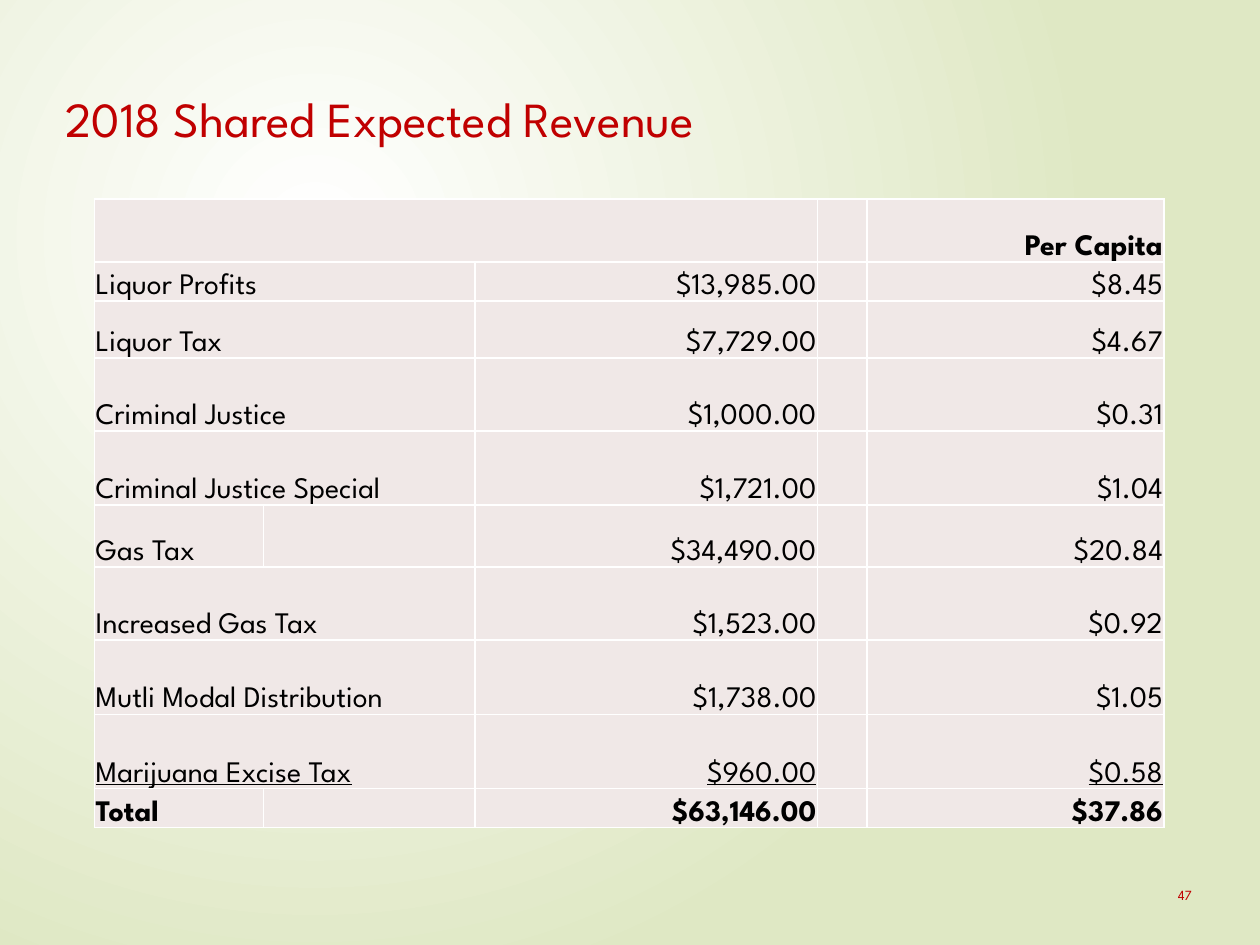
from lxml import etree
from pptx import Presentation
from pptx import util as u
from pptx.dml.color import RGBColor
from pptx.enum import text
from pptx.oxml import parse_xml
from pptx.oxml.ns import nsdecls, qn

COLORS = {"red": "C00000", "black": "000000", "cell": "F0E8E7",
          "white": "FFFFFF", "green": "DFE8C4"}
FONT = "League Spartan"
LEFT, RIGHT = text.PP_ALIGN.LEFT, text.PP_ALIGN.RIGHT

presentation = Presentation()
presentation.slide_width, presentation.slide_height = u.Inches(10), u.Inches(7.5)
slide = presentation.slides.add_slide(presentation.slide_layouts[6])
unit = presentation.slide_width / 100  # the slide is a grid of 100 by 75 units


def write(frame, words, size=17, color="black", align=LEFT, bold=False, underline=False):
    paragraph = frame.paragraphs[0]
    paragraph.alignment = align
    run = paragraph.add_run()
    run.text = words
    font = run.font
    font.name, font.size, font.bold, font.underline = FONT, u.Pt(size), bold, underline
    font.color.rgb = RGBColor.from_string(COLORS[color])


def style_cell(cell):
    """Fill the cell, tighten its margins and draw white borders."""
    cell.fill.solid()
    cell.fill.fore_color.rgb = RGBColor.from_string(COLORS["cell"])
    cell.vertical_anchor = text.MSO_ANCHOR.BOTTOM
    cell.margin_left = cell.margin_right = cell.margin_top = u.Inches(0.01)
    cell.margin_bottom = 0
    properties = cell._tc.get_or_add_tcPr()
    for index, side in enumerate(("lnL", "lnR", "lnT", "lnB")):
        properties.insert(index, parse_xml(
            f'<a:{side} {nsdecls("a")} w="12700"><a:solidFill>'
            f'<a:srgbClr val="{COLORS["white"]}"/></a:solidFill></a:{side}>'))


# Background: a round glow in the upper left
fill = slide.background.fill
fill.gradient()
for stop, name in zip(fill.gradient_stops, ("white", "green")):
    stop.color.rgb = RGBColor.from_string(COLORS[name])
gradient = slide._element.find(".//" + qn("a:gradFill"))
gradient.remove(gradient.find(qn("a:lin")))
glow = etree.SubElement(gradient, qn("a:path"), {"path": "circle"})
etree.SubElement(glow, qn("a:fillToRect"),
                 {"l": "50000", "t": "50000", "r": "100000", "b": "100000"})

# Title and slide number: words, size, box and top inset in grid units
for words, size, box, inset in (
    ("2018 Shared Expected Revenue", 28, (4.2, 4.2, 84, 15), 2.8),
    ("47", 8, (92.5, 69.6, 6.4, 4), 0.8),
):
    frame = slide.shapes.add_textbox(*(int(part * unit) for part in box)).text_frame
    frame.word_wrap = True
    frame.margin_top = int(inset * unit)
    write(frame, words, size=size, color="red")

# Revenue table
columns = (13.4, 16.8, 27.2, 3.9, 23.6)
rows = (
    (5.0, "", "", "Per Capita"),
    (3.1, "Liquor Profits", "$13,985.00", "$8.45"),
    (4.5, "Liquor Tax", "$7,729.00", "$4.67"),
    (5.8, "Criminal Justice", "$1,000.00", "$0.31"),
    (5.9, "Criminal Justice Special", "$1,721.00", "$1.04"),
    (4.9, "Gas Tax", "$34,490.00", "$20.84"),
    (5.8, "Increased Gas Tax", "$1,523.00", "$0.92"),
    (5.9, "Mutli Modal Distribution", "$1,738.00", "$1.05"),
    (5.9, "Marijuana Excise Tax", "$960.00", "$0.58"),
    (3.1, "Total", "$63,146.00", "$37.86"),
)
table = slide.shapes.add_table(
    len(rows), len(columns), int(7.5 * unit), int(15.8 * unit),
    int(sum(columns) * unit), int(sum(row[0] for row in rows) * unit)).table
for column, width in zip(table.columns, columns):
    column.width = int(width * unit)

for index, (height, label, amount, per_capita) in enumerate(rows):
    table.rows[index].height = int(height * unit)
    for cell in table.rows[index].cells:
        style_cell(cell)
    if index == 0:
        table.cell(0, 0).merge(table.cell(0, 2))
    elif label not in ("Gas Tax", "Total"):
        table.cell(index, 0).merge(table.cell(index, 1))
    for column, words, align in ((0, label, LEFT), (2, amount, RIGHT), (4, per_capita, RIGHT)):
        if words:
            write(table.cell(index, column).text_frame, words, align=align,
                  bold=index in (0, len(rows) - 1),
                  underline=label == "Marijuana Excise Tax")

presentation.save("out.pptx")
